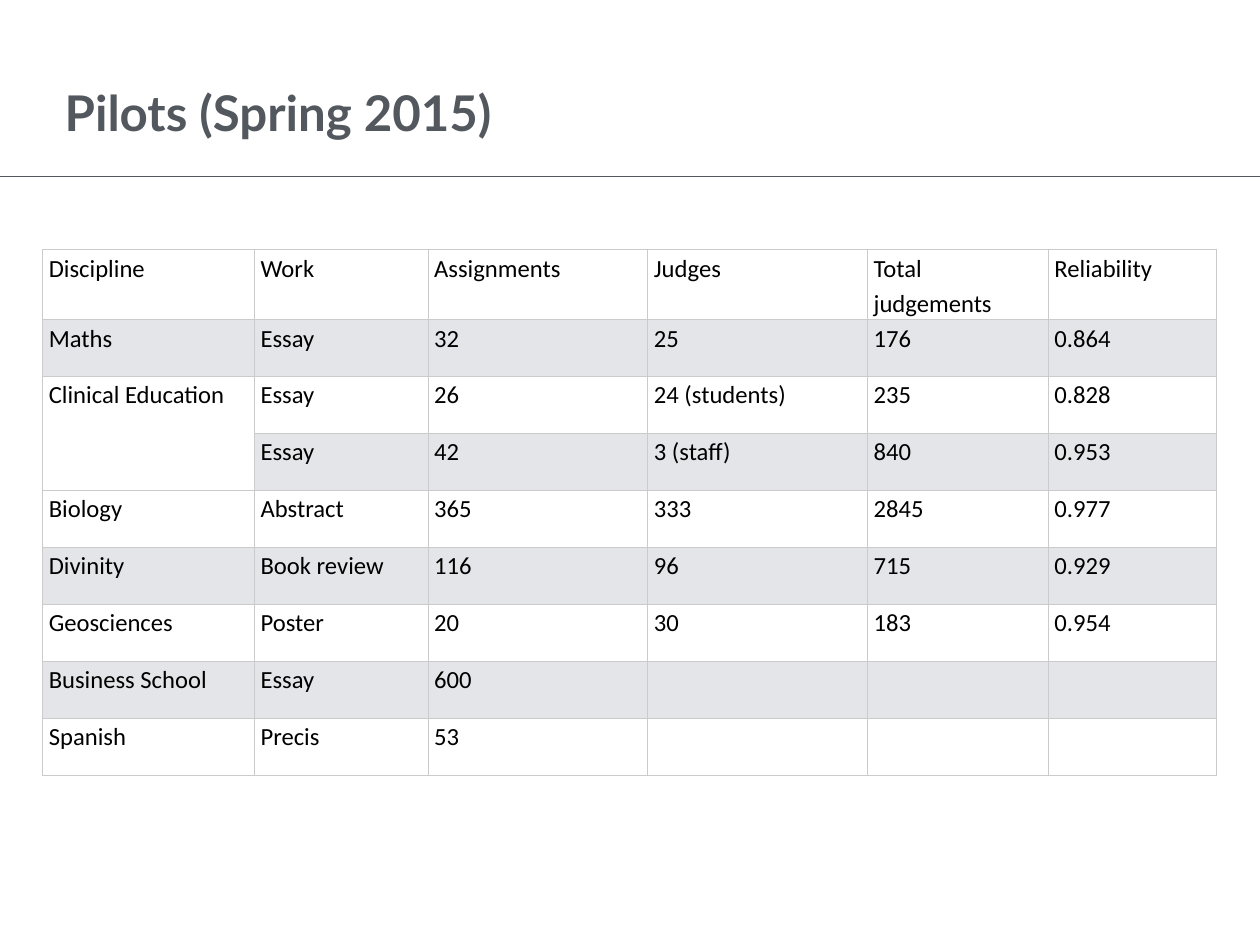
from dataclasses import dataclass

from lxml.etree import SubElement
from pptx import Presentation
from pptx.dml.color import RGBColor
from pptx.enum.shapes import MSO_CONNECTOR as Connector
from pptx.enum.text import MSO_ANCHOR as Anchor, PP_ALIGN as Align
from pptx.oxml import parse_xml
from pptx.oxml.ns import nsdecls, qn
from pptx.slide import Slide
from pptx.table import _Cell as Cell
from pptx.text.text import TextFrame
from pptx.util import Emu, Inches, Length, Pt

WIDTH, HEIGHT = Inches(14.22), Inches(10.67)
SLATE, BLACK, WHITE, BAND, GRID = "53585F", "000000", "FFFFFF", "E3E5E8", "CBCBCB"
ROW_SHARE = 6.03


@dataclass(frozen=True)
class Column:
    heading: str
    share: float


@dataclass(frozen=True)
class Pilot:
    discipline: str
    work: str
    assignments: str
    judges: str = ""
    judgements: str = ""
    reliability: str = ""

    def values(self) -> list[str]:
        return [self.discipline, self.work, self.assignments,
                self.judges, self.judgements, self.reliability]


COLUMNS = [
    Column("Discipline", 16.81),
    Column("Work", 13.78),
    Column("Assignments", 17.44),
    Column("Judges", 17.44),
    Column("Total judgements", 14.35),
    Column("Reliability", 13.36),
]
PILOTS = [
    Pilot("Maths", "Essay", "32", "25", "176", "0.864"),
    Pilot("Clinical Education", "Essay", "26", "24 (students)", "235", "0.828"),
    Pilot("", "Essay", "42", "3 (staff)", "840", "0.953"),
    Pilot("Biology", "Abstract", "365", "333", "2845", "0.977"),
    Pilot("Divinity", "Book review", "116", "96", "715", "0.929"),
    Pilot("Geosciences", "Poster", "20", "30", "183", "0.954"),
    Pilot("Business School", "Essay", "600"),
    Pilot("Spanish", "Precis", "53"),
]


def across(percent: float) -> Length:
    return Emu(round(WIDTH * percent / 100))


def down(percent: float) -> Length:
    return Emu(round(HEIGHT * percent / 100))


def color(code: str) -> RGBColor:
    return RGBColor.from_string(code)


def write(frame: TextFrame, text: str, *, font: str, size: float, ink: str,
          spacing: float | Length, before: float, bold: bool = False) -> None:
    paragraph = frame.paragraphs[0]
    paragraph.alignment = Align.LEFT
    paragraph.line_spacing = spacing
    paragraph.space_before = Pt(before)
    run = paragraph.add_run()
    run.text = text
    run.font.name, run.font.size, run.font.bold = font, Pt(size), bold
    run.font.color.rgb = color(ink)


def add_heading(slide: Slide, text: str) -> None:
    heading = slide.shapes.title
    heading.left, heading.top = across(5.13), down(5.72)
    heading.width, heading.height = across(89.73), down(12.28)
    frame = heading.text_frame
    frame.margin_left = frame.margin_right = frame.margin_top = frame.margin_bottom = 0
    frame.vertical_anchor = Anchor.MIDDLE
    frame.word_wrap = True
    write(frame, text, font="Lato", size=40, ink=SLATE,
          spacing=Pt(48), before=2, bold=True)


def add_rule(slide: Slide) -> None:
    level = down(18.65)
    rule = slide.shapes.add_connector(Connector.STRAIGHT, 0, level, WIDTH, level)
    rule.line.color.rgb = color(SLATE)
    rule.line.width = Pt(1)
    SubElement(rule._element.spPr, qn("a:effectLst"))


def outline(cell: Cell) -> None:
    properties = cell._tc.get_or_add_tcPr()
    for position, side in enumerate(("lnL", "lnR", "lnT", "lnB")):
        properties.insert(position, parse_xml(
            f'<a:{side} {nsdecls("a")} w="{Pt(0.5)}"><a:solidFill>'
            f'<a:srgbClr val="{GRID}"/></a:solidFill></a:{side}>'))


def fill_cell(cell: Cell, text: str, background: str) -> None:
    cell.fill.solid()
    cell.fill.fore_color.rgb = color(background)
    outline(cell)
    if text:
        cell.margin_left = cell.margin_right = Inches(0.07)
        cell.margin_top = cell.margin_bottom = 0
        write(cell.text_frame, text, font="Calibri", size=20, ink=BLACK,
              spacing=1.15, before=10)


def add_pilots(slide: Slide) -> None:
    lines = [[column.heading for column in COLUMNS]]
    lines += [pilot.values() for pilot in PILOTS]
    table = slide.shapes.add_table(
        len(lines), len(COLUMNS), across(3.38), down(26.43),
        across(sum(column.share for column in COLUMNS)),
        down(ROW_SHARE * len(lines))).table
    table.first_row = table.horz_banding = False
    for slot, column in zip(table.columns, COLUMNS):
        slot.width = across(column.share)
    for index, values in enumerate(lines):
        table.rows[index].height = down(ROW_SHARE)
        for place, text in enumerate(values):
            fill_cell(table.cell(index, place), text, BAND if index % 2 else WHITE)
    for index, values in enumerate(lines):
        if not values[0]:
            table.cell(index - 1, 0).merge(table.cell(index, 0))


def main() -> None:
    deck = Presentation()
    deck.slide_width, deck.slide_height = WIDTH, HEIGHT
    slide = deck.slides.add_slide(deck.slide_layouts[5])
    slide.background.fill.solid()
    slide.background.fill.fore_color.rgb = color(WHITE)
    add_rule(slide)
    add_heading(slide, "Pilots (Spring 2015)")
    add_pilots(slide)
    deck.save("out.pptx")


if __name__ == "__main__":
    main()
